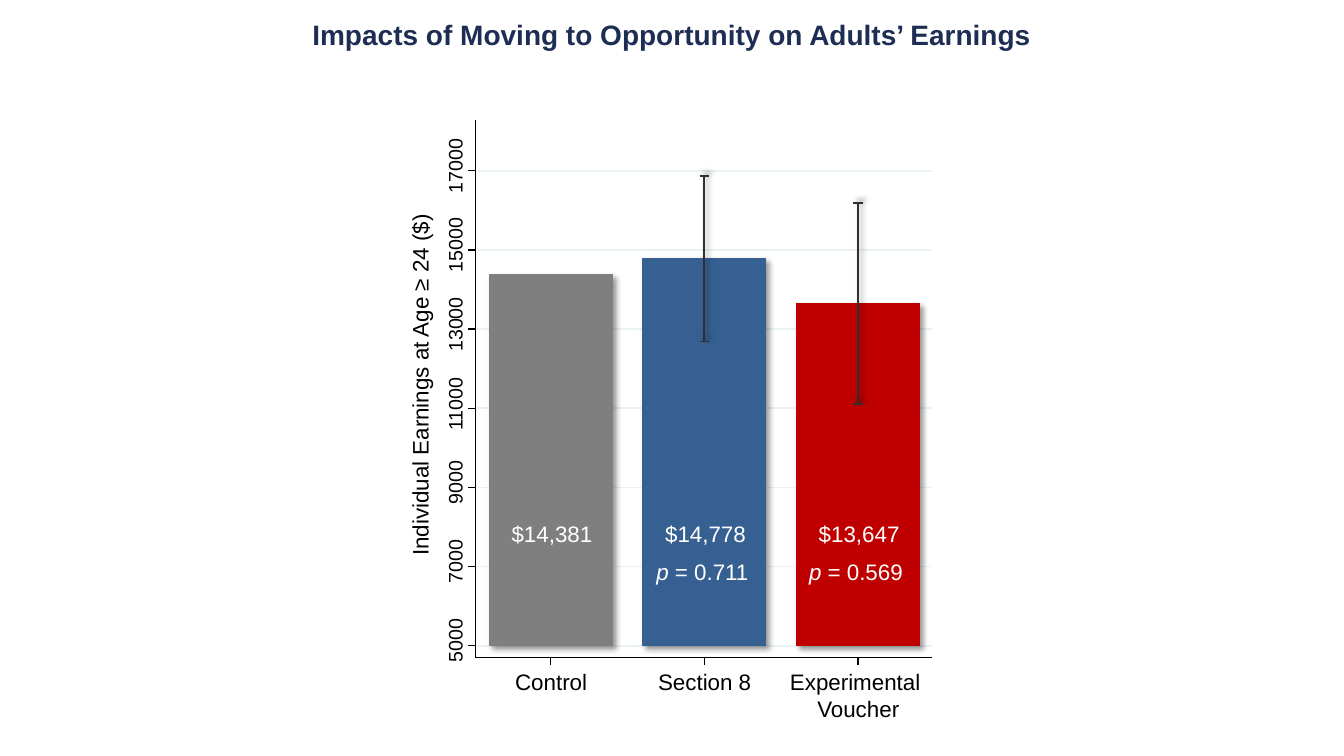
from dataclasses import dataclass

from lxml import etree
from pptx import Presentation
from pptx.dml.color import RGBColor
from pptx.enum.shapes import MSO_CONNECTOR, MSO_SHAPE
from pptx.enum.text import MSO_AUTO_SIZE, PP_ALIGN
from pptx.oxml.ns import qn
from pptx.util import Cm, Pt

STRAIGHT = MSO_CONNECTOR.STRAIGHT
RECTANGLE = MSO_SHAPE.RECTANGLE
GROW = MSO_AUTO_SIZE.SHAPE_TO_FIT_TEXT
LEFT, CENTER = PP_ALIGN.LEFT, PP_ALIGN.CENTER

FONT = "Arial"
BLACK, WHITE, NAVY = "000000", "FFFFFF", "1E2D53"
GRID_COLOR, ERROR_COLOR = "EAF2F3", "303030"

# Plot geometry in centimetres
AXIS_LEFT, AXIS_RIGHT = 11.98, 23.49
AXIS_TOP, AXIS_BOTTOM = 3.02, 16.56
BASE_VALUE, BASE_Y = 5000, 16.27
CM_PER_DOLLAR = 0.997 / 1000
TICK = 0.19
TICK_VALUES = range(5000, 17001, 2000)
FIRST_CENTER, BAR_STEP, BAR_WIDTH = 13.88, 3.87, 3.1
CAP_HALF = 0.12
AXIS_WEIGHT, LINE_WEIGHT = 0.88, 1.25


@dataclass
class Group:
    caption: str
    caption_width: float
    earnings: int
    color: str
    margin: int = 0
    p_value: str = ""


GROUPS = [
    Group("Control", 1.85, 14381, "7F7F7F"),
    Group("Section 8", 2.38, 14778, "376092", 2090, "0.711"),
    Group("Experimental \nVoucher", 3.5, 13647, "C00000", 2535, "0.569"),
]

prs = Presentation()
prs.slide_width, prs.slide_height = Cm(33.87), Cm(19.05)
slide = prs.slides.add_slide(prs.slide_layouts[6])


def rgb(color: str) -> RGBColor:
    return RGBColor.from_string(color)


def y_of(value: float) -> float:
    """Vertical position in centimetres of a dollar value."""
    return BASE_Y - (value - BASE_VALUE) * CM_PER_DOLLAR


def center_of(index: int) -> float:
    """Horizontal centre in centimetres of a bar."""
    return FIRST_CENTER + index * BAR_STEP


def cast_shadow(effects, degrees: int) -> None:
    shadow = etree.SubElement(
        effects, qn("a:outerShdw"), blurRad=str(Pt(4)), dist=str(Pt(3)),
        dir=str(degrees * 60000), algn="tl", rotWithShape="0")
    black = etree.SubElement(shadow, qn("a:srgbClr"), val=BLACK)
    etree.SubElement(black, qn("a:alpha"), val="40000")


def draw_line(x1: float, y1: float, x2: float, y2: float,
              color: str = BLACK, weight: float = AXIS_WEIGHT):
    """Draw a line and return its effect list, which is empty."""
    line = slide.shapes.add_connector(STRAIGHT, Cm(x1), Cm(y1), Cm(x2), Cm(y2))
    line.line.color.rgb = rgb(color)
    line.line.width = Pt(weight)
    return etree.SubElement(line._element.spPr, qn("a:effectLst"))


def draw_bar(index: int, group: Group) -> None:
    top = y_of(group.earnings)
    bar = slide.shapes.add_shape(
        RECTANGLE, Cm(center_of(index) - BAR_WIDTH / 2), Cm(top),
        Cm(BAR_WIDTH), Cm(BASE_Y - top))
    bar.fill.solid()
    bar.fill.fore_color.rgb = rgb(group.color)
    bar.line.color.rgb = rgb(group.color)
    bar.line.width = Pt(0)
    bar.shadow.inherit = False
    cast_shadow(bar._element.spPr.find(qn("a:effectLst")), 45)


def draw_error_bar(index: int, group: Group) -> None:
    x = center_of(index)
    high, low = y_of(group.earnings + group.margin), y_of(group.earnings - group.margin)
    for x1, y1, x2, y2 in [(x, low, x, high),
                           (x - CAP_HALF, high, x + CAP_HALF, high),
                           (x - CAP_HALF, low, x + CAP_HALF, low)]:
        cast_shadow(draw_line(x1, y1, x2, y2, ERROR_COLOR, LINE_WEIGHT), 315)


def format_run(run, size: float, color: str, bold: bool = False,
               italic: bool = False) -> None:
    run.font.name = FONT
    run.font.size = Pt(size)
    run.font.color.rgb = rgb(color)
    run.font.bold = bold
    run.font.italic = italic


def add_text(text: str, center: float, top: float, width: float, height: float,
             size: float, color: str = BLACK, align=CENTER, bold: bool = False,
             italic: bool = False, tight: bool = False, rotation: int = 0):
    """Add text centred on an x position; tight text has no margins or wrap."""
    box = slide.shapes.add_textbox(
        Cm(center - width / 2), Cm(top), Cm(width), Cm(height))
    box.rotation = rotation
    frame = box.text_frame
    frame.word_wrap = not tight
    frame.auto_size = GROW
    if tight:
        frame.margin_left = frame.margin_right = 0
        frame.margin_top = frame.margin_bottom = 0
    frame.text = text
    for paragraph in frame.paragraphs:
        paragraph.alignment = align
        for run in paragraph.runs:
            format_run(run, size, color, bold, italic)
    return frame


def draw_value_axis() -> None:
    draw_line(AXIS_LEFT, AXIS_BOTTOM, AXIS_LEFT, AXIS_TOP)
    for value in TICK_VALUES:
        y = y_of(value)
        draw_line(AXIS_LEFT, y, AXIS_LEFT - TICK, y)
        width = 0.29 * len(str(value))
        add_text(str(value), 11.47, y - 0.46, width, 0.61, 14,
                 align=LEFT, tight=True, rotation=270)
    add_text("Individual Earnings at Age ≥ 24 ($)", 10.58, 9.3, 8.73, 0.68, 16,
             align=LEFT, tight=True, rotation=270)


def draw_group_axis() -> None:
    draw_line(AXIS_LEFT, AXIS_BOTTOM, AXIS_RIGHT, AXIS_BOTTOM)
    for index, group in enumerate(GROUPS):
        x = center_of(index)
        draw_line(x, AXIS_BOTTOM, x, AXIS_BOTTOM + TICK)
        lines = group.caption.count("\n") + 1
        add_text(group.caption, x + 0.01, 16.84, group.caption_width,
                 0.68 * lines, 16, tight=True)


def label_bar(index: int, group: Group) -> None:
    x = center_of(index) + 0.03
    add_text(f"${group.earnings:,}", x, 12.98, BAR_WIDTH, 0.94, 16, WHITE)
    if group.p_value:
        frame = add_text("p", x, 13.94, BAR_WIDTH, 0.94, 16, WHITE, italic=True)
        result = frame.paragraphs[0].add_run()
        result.text = f" = {group.p_value} "
        format_run(result, 16, WHITE)


def main() -> None:
    add_text("Impacts of Moving to Opportunity on Adults’ Earnings",
             16.93, 0.32, 25.4, 1.12, 20, NAVY, bold=True)
    for value in TICK_VALUES:
        draw_line(AXIS_LEFT, y_of(value), AXIS_RIGHT, y_of(value),
                  GRID_COLOR, LINE_WEIGHT)
    for index, group in enumerate(GROUPS):
        draw_bar(index, group)
    for index, group in enumerate(GROUPS):
        if group.margin:
            draw_error_bar(index, group)
    draw_value_axis()
    draw_group_axis()
    for index, group in enumerate(GROUPS):
        label_bar(index, group)
    prs.save("out.pptx")


if __name__ == "__main__":
    main()
